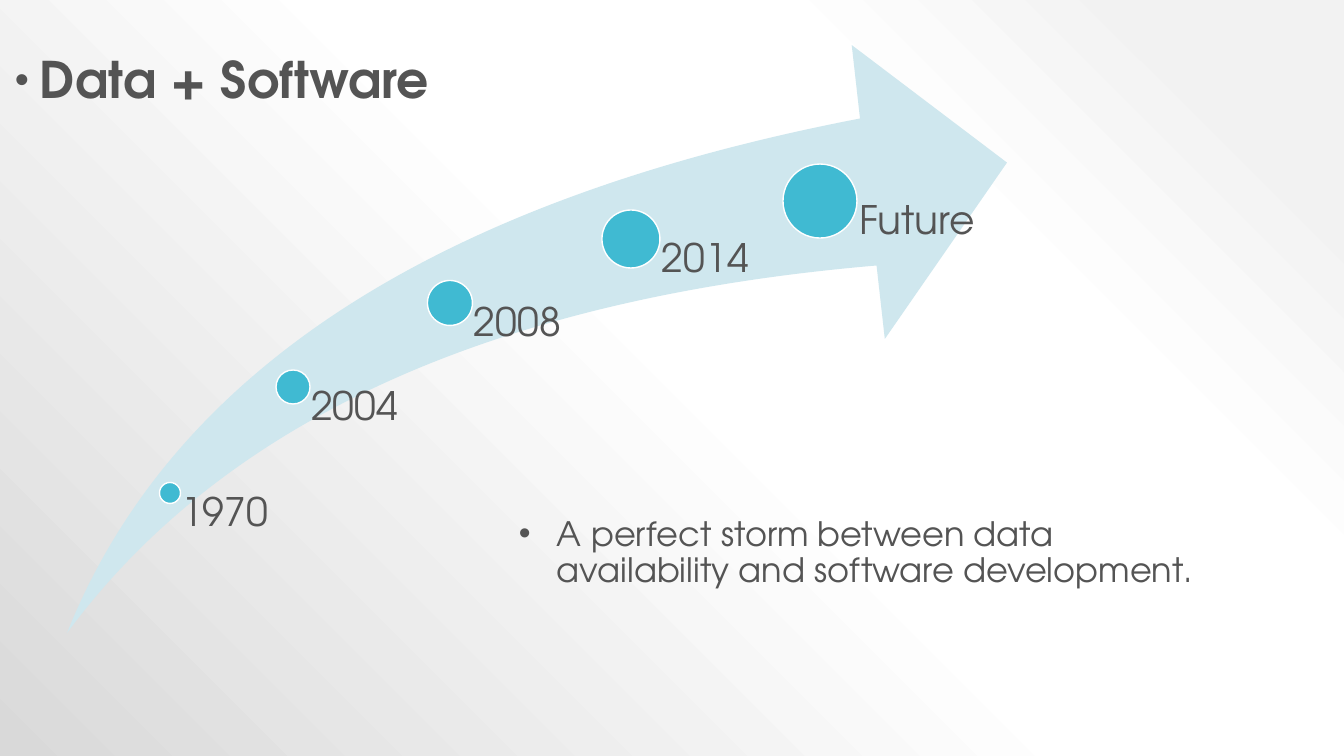
from lxml import etree
from pptx import Presentation
from pptx.dml.color import RGBColor
from pptx.enum.shapes import MSO_SHAPE
from pptx.enum.text import MSO_ANCHOR
from pptx.oxml import parse_xml
from pptx.oxml.ns import qn
from pptx.util import Pt

PX = 914400 / 100.8
FONT = "TeX Gyre Adventor"
SWOOSH, CIRCLE = MSO_SHAPE.SWOOSH_ARROW, MSO_SHAPE.OVAL
TOP = MSO_ANCHOR.TOP
COLORS = {"text": "545454", "arrow": "CFE7EE", "dot": "40BAD2", "outline": "FFFFFF"}
BACKDROP_STOPS = [(10, "F2F2F2"), (28, "FFFFFF"), (48, "FFFFFF"), (100, "D9D9D9")]


def px(*lengths):
    """Turn pixel lengths into a list of EMU."""
    return [round(length * PX) for length in lengths]


def add_text(text, box, size, bold=False, insets=(10, 5, 10, 5), before=0,
             after=0, margin=0, hanging=0, bullet_percent=None):
    frame = slide.shapes.add_textbox(*px(*box)).text_frame
    frame.word_wrap = True
    frame.vertical_anchor = TOP
    (frame.margin_left, frame.margin_top,
     frame.margin_right, frame.margin_bottom) = px(*insets)
    paragraph = frame.paragraphs[0]
    paragraph.line_spacing = 0.9
    paragraph.space_before, paragraph.space_after = Pt(before), Pt(after)
    run = paragraph.add_run()
    run.text = text
    run.font.name, run.font.size, run.font.bold = FONT, Pt(size), bold
    run.font.color.rgb = RGBColor.from_string(COLORS["text"])
    if bullet_percent:
        properties = paragraph._p.get_or_add_pPr()
        margin_emu, hanging_emu = px(margin, hanging)
        properties.set("marL", str(margin_emu))
        properties.set("indent", str(-hanging_emu))
        color = etree.SubElement(properties, qn("a:buClr"))
        etree.SubElement(color, qn("a:srgbClr"), val=COLORS["text"])
        etree.SubElement(properties, qn("a:buSzPct"), val=str(bullet_percent * 1000))
        etree.SubElement(properties, qn("a:buFont"), typeface="Arial")
        etree.SubElement(properties, qn("a:buChar"), char="•")


prs = Presentation()
prs.slide_width, prs.slide_height = px(1344, 756)
slide = prs.slides.add_slide(prs.slide_layouts[6])

# Background: radial gradient spreading from the top right corner
backdrop = slide.background.fill
backdrop.gradient()
stops = "".join(f'<a:gs pos="{position * 1000}"><a:srgbClr val="{color}"/></a:gs>'
                for position, color in BACKDROP_STOPS)
gradient = parse_xml(
    '<a:gradFill xmlns:a="http://schemas.openxmlformats.org/drawingml/2006/main" '
    f'rotWithShape="1"><a:gsLst>{stops}</a:gsLst><a:path path="circle">'
    '<a:fillToRect l="100000" b="100000"/></a:path>'
    '<a:tileRect t="-100000" r="-100000"/></a:gradFill>')
default_gradient = slide._element.find(".//" + qn("a:gradFill"))
default_gradient.getparent().replace(default_gradient, gradient)

# Timeline arrow
ARROW_TOP, ARROW_HEIGHT = 45, 588
arrow = slide.shapes.add_shape(SWOOSH, *px(67, ARROW_TOP, 940, ARROW_HEIGHT))
arrow.adjustments[0] = arrow.adjustments[1] = 0.25
arrow.shadow.inherit = False
arrow.fill.solid()
arrow.fill.fore_color.rgb = RGBColor.from_string(COLORS["arrow"])
arrow.line.fill.background()

# Milestones: label, dot centre x and y, dot diameter, label width
MILESTONES = [
    ("1970", 170, 493, 21, 123),
    ("2004", 293, 387, 34, 156),
    ("2008", 450, 303, 45, 181),
    ("2014", 631, 239, 58, 188),
    ("Future", 820, 201, 74, 188),
]
for label, x, y, diameter, label_width in MILESTONES:
    dot = slide.shapes.add_shape(
        CIRCLE, *px(x - diameter / 2, y - diameter / 2, diameter, diameter))
    dot.shadow.inherit = False
    dot.fill.solid()
    dot.fill.fore_color.rgb = RGBColor.from_string(COLORS["dot"])
    dot.line.color.rgb = RGBColor.from_string(COLORS["outline"])
    dot.line.width = Pt(1)
    # Each label box hangs from its dot's centre to the foot of the arrow
    add_text(label, (x, y, label_width, ARROW_TOP + ARROW_HEIGHT - y), 28,
             insets=(round(diameter * 0.53), 0, 0, 0), after=10)

# Heading and message
add_text("Data + Software", (0, 50, 866, 126), 36, bold=True, before=18,
         margin=30, hanging=25, bullet_percent=80)
add_text("A perfect storm between data availability and software development.",
         (509, 512, 714, 157), 24, margin=38, hanging=38, bullet_percent=100)

prs.save("out.pptx")
